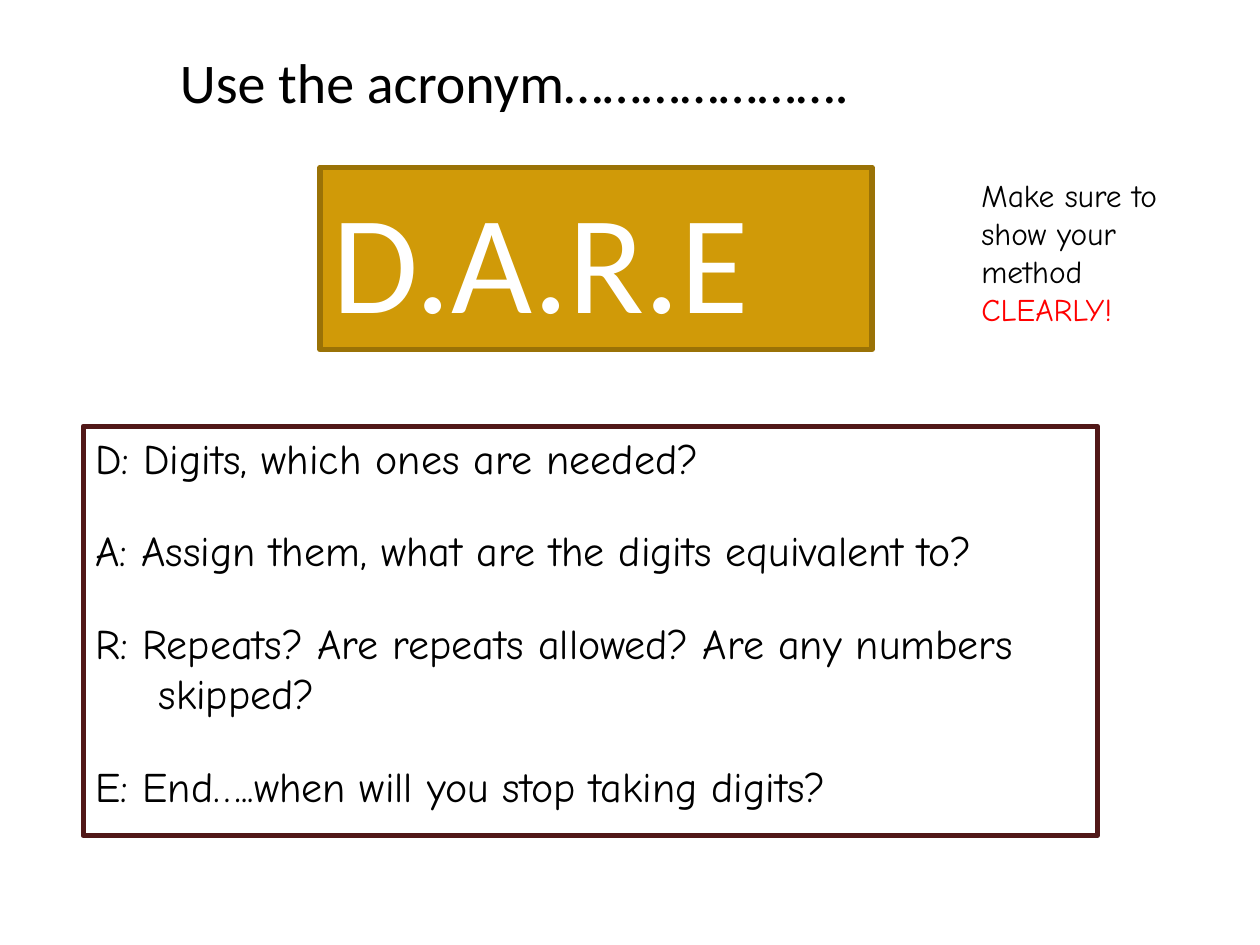
from pptx import Presentation
from pptx.dml.color import RGBColor
from pptx.enum.shapes import MSO_SHAPE
from pptx.enum.text import MSO_ANCHOR, PP_ALIGN
from pptx.util import Inches, Pt

RECTANGLE = MSO_SHAPE.RECTANGLE
TOP = MSO_ANCHOR.TOP
LEFT = PP_ALIGN.LEFT

WIDTH, HEIGHT = 10, 7.5
HANGING = 0.5
STEP_GAP = 24
BORDER = 3
COLORS = {
    "white": "FFFFFF", "black": "000000", "red": "FF0000",
    "gold": "D09A08", "dark_gold": "9A7206", "maroon": "511818",
}

STEPS = [
    "D: Digits, which ones are needed?",
    "A: Assign them, what are the digits equivalent to?",
    "R: Repeats? Are repeats allowed? Are any numbers skipped?",
    "E: End…..when will you stop taking digits?",
]

BOXES = [
    {"area": (0.066, 0.451, 0.805, 0.433), "colors": ("white", "maroon"),
     "font": "Comic Neue", "size": 24, "hanging": True,
     "paragraphs": [[(step, "black")] for step in STEPS]},
    {"area": (0.254, 0.177, 0.438, 0.193), "colors": ("gold", "dark_gold"),
     "font": "Calibri", "size": 80,
     "paragraphs": [[("D.A.R.E", "white")]]},
    {"area": (0.133, 0.044, 0.67, 0.085),
     "font": "Calibri", "size": 32,
     "paragraphs": [[("Use the acronym………………….", "black")]]},
    {"area": (0.769, 0.18, 0.205, 0.216),
     "font": "Comic Neue", "size": 18,
     "paragraphs": [[("Make sure to show your method ", "black"),
                     ("CLEARLY!", "red")]]},
]


def rgb(name):
    return RGBColor.from_string(COLORS[name])


def add_box(slide, box):
    scales = (WIDTH, HEIGHT, WIDTH, HEIGHT)
    area = [Inches(share * scale) for share, scale in zip(box["area"], scales)]
    if "colors" in box:
        shape = slide.shapes.add_shape(RECTANGLE, *area)
        shape.shadow.inherit = False
        fill, line = box["colors"]
        shape.fill.solid()
        shape.fill.fore_color.rgb = rgb(fill)
        shape.line.color.rgb = rgb(line)
        shape.line.width = Pt(BORDER)
    else:
        shape = slide.shapes.add_textbox(*area)
    return shape


def write_text(frame, box):
    frame.word_wrap = True
    frame.vertical_anchor = TOP
    for index, runs in enumerate(box["paragraphs"]):
        paragraph = frame.add_paragraph() if index else frame.paragraphs[0]
        paragraph.alignment = LEFT
        if box.get("hanging"):
            properties = paragraph._p.get_or_add_pPr()
            properties.set("marL", str(Inches(HANGING)))
            properties.set("indent", str(-Inches(HANGING)))
        if index:
            paragraph.space_before = Pt(STEP_GAP)
        for text, color in runs:
            run = paragraph.add_run()
            run.text = text
            run.font.name = box["font"]
            run.font.size = Pt(box["size"])
            run.font.color.rgb = rgb(color)


def main():
    presentation = Presentation()
    presentation.slide_width = Inches(WIDTH)
    presentation.slide_height = Inches(HEIGHT)
    slide = presentation.slides.add_slide(presentation.slide_layouts[6])
    slide.background.fill.solid()
    slide.background.fill.fore_color.rgb = rgb("white")
    for box in BOXES:
        write_text(add_box(slide, box).text_frame, box)
    presentation.save("out.pptx")


if __name__ == "__main__":
    main()
